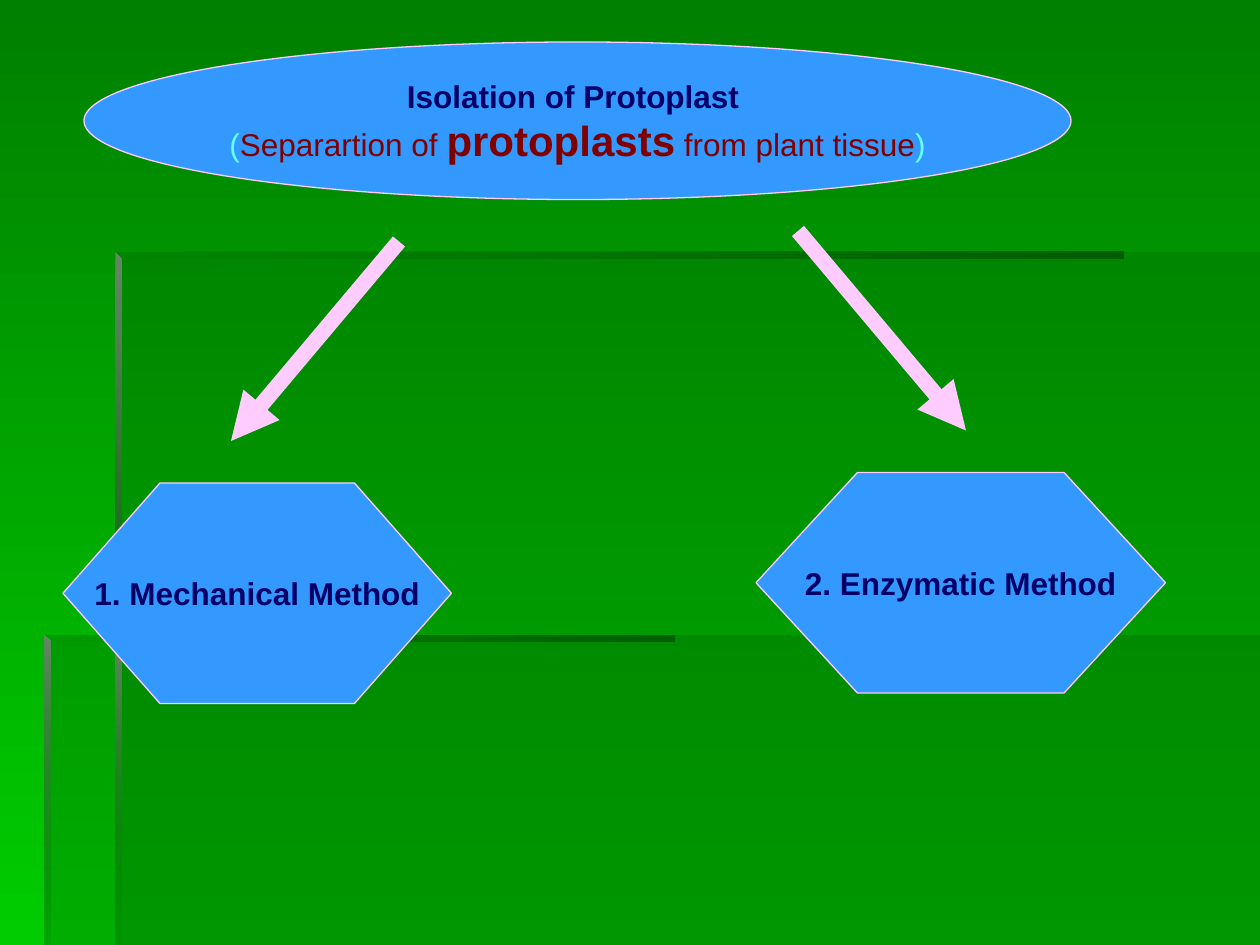
import collections

import pptx
import pptx.dml.color
import pptx.enum.shapes
import pptx.enum.text
import pptx.oxml.ns
import pptx.util
from lxml import etree

RGB = pptx.dml.color.RGBColor
SHAPES = pptx.enum.shapes.MSO_SHAPE
DARK_GREEN = RGB(0x00, 0x80, 0x00)
BRIGHT_GREEN = RGB(0x00, 0xCC, 0x00)
PANEL_GREEN = RGB(0x00, 0x66, 0x00)
SHADE_GREEN = RGB(0x00, 0x5E, 0x00)
GREY_GREEN = RGB(0x66, 0x86, 0x66)
BLUE = RGB(0x33, 0x99, 0xFF)
PINK = RGB(0xFF, 0xCC, 0xFF)
NAVY = RGB(0x00, 0x00, 0x66)
CYAN = RGB(0x66, 0xFF, 0xFF)
MAROON = RGB(0x80, 0x00, 0x00)

COLUMNS, ROWS = 120, 90
UNIT = pptx.util.Inches(10) / COLUMNS
RIGHTWARD, DOWNWARD = 0, 270
RAIL = 0.6

Box = collections.namedtuple("Box", "left top width height")
Span = collections.namedtuple("Span", "text color size bold", defaults=(18, False))


def grid(*cells):
    """Turn grid columns and rows into lengths."""
    return [pptx.util.Emu(round(cell * UNIT)) for cell in cells]


def add_xml(parent, tag, **attributes):
    """Append a drawing element to its parent."""
    return etree.SubElement(parent, pptx.oxml.ns.qn(tag), **attributes)


def set_opacity(shape, percents):
    """Give each fill colour of a shape its opacity."""
    colors = shape.element.spPr.xpath("./a:solidFill/a:srgbClr | ./a:gradFill//a:srgbClr")
    for color, percent in zip(colors, percents):
        if percent < 100:
            add_xml(color, "a:alpha", val=str(percent * 1000))


def set_gradient(fill, colors, angle):
    """Fill with a linear gradient between two colours."""
    fill.gradient()
    fill.gradient_angle = angle
    for stop, color, position in zip(fill.gradient_stops, colors, (0, 1)):
        stop.color.rgb = color
        stop.position = position


def add_polygon(page, points):
    """Draw a closed outline without line or shadow."""
    corners = [grid(*point) for point in points]
    builder = page.shapes.build_freeform(*corners[0], scale=1.0)
    builder.add_line_segments(corners[1:], close=True)
    shape = builder.convert_to_shape()
    shape.shadow.inherit = False
    shape.line.fill.background()
    return shape


def add_panel(page, box, notch_width=0, notch_height=0):
    """Place a translucent panel with an optional notch at its top left."""
    right, bottom = box.left + box.width, box.top + box.height
    inner, step = box.left + notch_width, box.top + notch_height
    points = [(inner, box.top), (right, box.top), (right, bottom), (box.left, bottom), (box.left, step)]
    if notch_width:
        points.append((inner, step))
    panel = add_polygon(page, points)
    panel.fill.solid()
    panel.fill.fore_color.rgb = PANEL_GREEN
    set_opacity(panel, [30])


def add_top_rail(page, box):
    """Place a horizontal rail that fades in from the left."""
    right, bottom = box.left + box.width, box.top + box.height
    rail = add_polygon(page, [(box.left, box.top), (right, box.top), (right, bottom), (box.left, bottom)])
    set_gradient(rail.fill, (PANEL_GREEN, SHADE_GREEN), RIGHTWARD)
    set_opacity(rail, [0, 100])


def add_side_rail(page, box, end_opacity):
    """Place a vertical rail with a mitred top."""
    right, bottom = box.left + box.width, box.top + box.height
    rail = add_polygon(
        page, [(box.left, box.top), (box.left, bottom), (right, bottom), (right, box.top + box.width)])
    set_gradient(rail.fill, (GREY_GREEN, PANEL_GREEN), DOWNWARD)
    set_opacity(rail, [100, end_opacity])


def add_backdrop(page, box):
    """Place the gradient background, its panels and rails."""
    set_gradient(page.background.fill, (DARK_GREEN, BRIGHT_GREEN), DOWNWARD)
    outer, inner, upper, lower = box.left + 4.2, box.left + 11, box.top + 24, box.top + 60.5
    right, bottom = box.left + box.width, box.top + box.height
    add_panel(page, Box(inner, lower, right - inner, bottom - lower))
    add_panel(page, Box(outer, upper, right - outer, bottom - upper), inner - outer, lower - upper)
    add_top_rail(page, Box(inner, upper, 96, RAIL))
    add_side_rail(page, Box(inner, upper, RAIL, lower + RAIL - upper), 100)
    add_side_rail(page, Box(inner, lower, RAIL, bottom - lower), 0)
    add_top_rail(page, Box(outer, lower, 60, RAIL))
    add_side_rail(page, Box(outer, lower, RAIL, bottom - lower), 10)


def add_node(page, kind, box, lines):
    """Place a blue shape with centred lines of text."""
    node = page.shapes.add_shape(kind, *grid(*box))
    node.shadow.inherit = False
    node.fill.solid()
    node.fill.fore_color.rgb = BLUE
    node.line.color.rgb = PINK
    node.line.width = pptx.util.Pt(0.75)
    frame = node.text_frame
    frame.word_wrap = False
    frame.vertical_anchor = pptx.enum.text.MSO_ANCHOR.MIDDLE
    for index, line in enumerate(lines):
        para = frame.add_paragraph() if index else frame.paragraphs[0]
        para.alignment = pptx.enum.text.PP_ALIGN.CENTER
        for span in line:
            run = para.add_run()
            run.text = span.text
            run.font.name = "Arial"
            run.font.size = pptx.util.Pt(span.size)
            run.font.bold = span.bold
            run.font.color.rgb = span.color
    return node


def add_title(page, box):
    """Place the title ellipse."""
    add_node(page, SHAPES.OVAL, box, [
        [Span("Isolation of Protoplast ", NAVY, bold=True)],
        [
            Span("(", CYAN),
            Span("Separartion of ", MAROON),
            Span("protoplasts", MAROON, 24, True),
            Span(" from plant tissue", MAROON),
            Span(")", CYAN),
        ],
    ])


def add_method(page, box, label, slant):
    """Place the hexagon of one method."""
    hexagon = add_node(page, SHAPES.HEXAGON, box, [[Span(label, NAVY, bold=True)]])
    hexagon.adjustments[0] = slant


def add_arrow(page, start, end):
    """Place a thick arrow between two grid points."""
    straight = pptx.enum.shapes.MSO_CONNECTOR.STRAIGHT
    arrow = page.shapes.add_connector(straight, *grid(*start, *end))
    arrow.line.color.rgb = PINK
    arrow.line.width = pptx.util.Pt(9)
    add_xml(arrow.line._get_or_add_ln(), "a:tailEnd", type="triangle")
    add_xml(arrow.element.spPr, "a:effectLst")


def main():
    """Build and save the slide."""
    deck = pptx.Presentation()
    deck.slide_width, deck.slide_height = grid(COLUMNS, ROWS)
    page = deck.slides.add_slide(deck.slide_layouts[6])
    add_backdrop(page, Box(0, 0, COLUMNS, ROWS))
    add_title(page, Box(8, 4, 94, 15))
    add_arrow(page, (38, 23), (22, 42))
    add_arrow(page, (76, 22), (92, 41))
    add_method(page, Box(6, 46, 37, 21), "1. Mechanical Method", 0.44)
    add_method(page, Box(72, 45, 39, 21), "2. Enzymatic Method", 0.46)
    deck.save("out.pptx")


if __name__ == "__main__":
    main()
